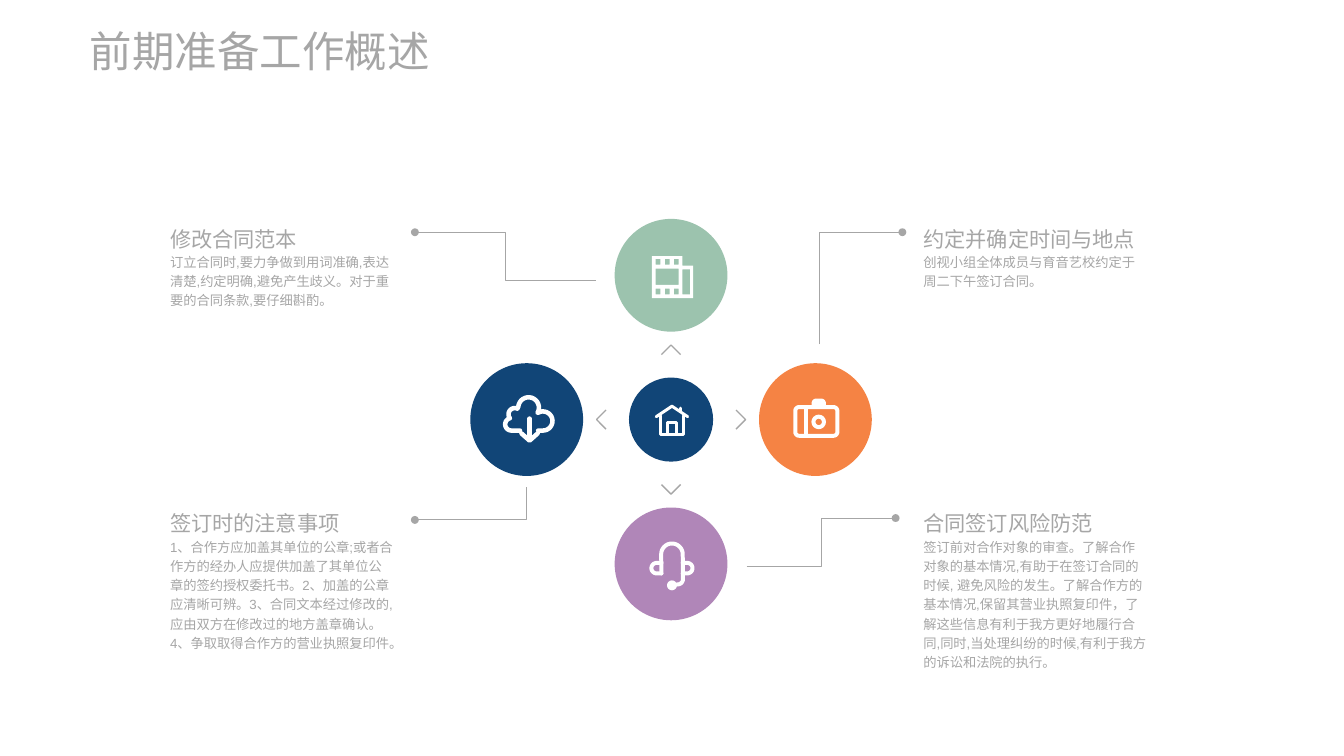
"""Build the slide that sums up the preparation work around a contract."""
from math import cos, radians, sin

from lxml.etree import SubElement
from pptx import Presentation
from pptx.dml.color import RGBColor
from pptx.enum.shapes import MSO_SHAPE
from pptx.enum.text import MSO_ANCHOR, MSO_AUTO_SIZE, PP_ALIGN
from pptx.oxml.ns import qn
from pptx.util import Inches, Pt

COLORS = {"grey": "A6A6A6", "white": "FFFFFF", "green": "9CC3AE",
          "navy": "114577", "orange": "F58344", "purple": "B086B8"}
WIDTH, HEIGHT = 14.06, 7.91
HUB_X, HUB_Y = 7.02, 4.39
ORBIT, TIP = 1.51, 0.78
LEFT_TEXT, RIGHT_TEXT, TEXT_WIDTH = 1.78, 9.66, 2.33
UPPER_ROW, LOWER_ROW = 2.31, 5.29

TITLE = "前期准备工作概述"
NOTES = [
    (LEFT_TEXT, UPPER_ROW, 0.91, "修改合同范本",
     "订立合同时,要力争做到用词准确,表达清楚,约定明确,避免产生歧义。对于重要的合同条款,要仔细斟酌。"),
    (RIGHT_TEXT, UPPER_ROW, 0.71, "约定并确定时间与地点",
     "创视小组全体成员与育音艺校约定于周二下午签订合同。"),
    (LEFT_TEXT, LOWER_ROW, 1.52, "签订时的注意事项",
     "1、合作方应加盖其单位的公章;或者合作方的经办人应提供加盖了其单位公章的签约授权委托书。"
     "2、加盖的公章应清晰可辨。3、合同文本经过修改的,应由双方在修改过的地方盖章确认。"
     "4、争取取得合作方的营业执照复印件。"),
    (RIGHT_TEXT, LOWER_ROW, 1.72, "合同签订风险防范",
     "签订前对合作对象的审查。了解合作对象的基本情况,有助于在签订合同的时候, 避免风险的发生。"
     "了解合作方的基本情况,保留其营业执照复印件，了解这些信息有利于我方更好地履行合同,同时,"
     "当处理纠纷的时候,有利于我方的诉讼和法院的执行。"),
]
LEADERS = [
    [(6.23, 2.94), (5.29, 2.94), (5.29, 2.43), (4.34, 2.43)],
    [(8.57, 3.6), (8.57, 2.43), (9.44, 2.43)],
    [(7.81, 5.93), (8.59, 5.93), (8.59, 5.42), (9.37, 5.42)],
    [(5.51, 5.1), (5.51, 5.44), (4.34, 5.44)],
]


def arc(x, y, radius, start, end):
    """Return points along an arc, with angles running clockwise from the right."""
    angles = [start + (end - start) * step / 16 for step in range(17)]
    return [(x + radius * cos(radians(a)), y + radius * sin(radians(a))) for a in angles]


def box(left, top, right, bottom):
    """Return the corners of a rectangle."""
    return [(left, top), (right, top), (right, bottom), (left, bottom)]


CLOUD = [
    [(-7, 11.5), *arc(-16, 5, 6.5, 90, 255), *arc(-12.5, -5.5, 6.5, 140, 295),
     *arc(2, -12.5, 10.8, 185, 390), *arc(17, 1.5, 10, 240, 450), (12, 11.5)],
    [(3, -1), (3, 21)],
    [(-5.5, 14.5), (3, 22), (11.5, 14.5)],
]
HEADSET = [
    [(-10, 10), *arc(-15, 4.5, 5.5, 90, 270), (-10, -1)],
    [(-10, 10), *arc(1, -10, 11.3, 180, 360), *arc(7, 16, 5.5, 0, 90), (3, 22)],
    [(12.3, -1), *arc(17, 4.5, 5.5, 270, 450), (12.3, 10)],
]
CAMERA = [
    [*arc(-17, -9, 4, 180, 270), *arc(19, -9, 4, 270, 360),
     *arc(19, 13, 4, 0, 90), *arc(-17, 13, 4, 90, 180), (-21, -9)],
    [(-9.5, -13), (-9.5, 17)],
    arc(3.5, 2.5, 5.5, 0, 360),
]
HOUSE = [
    [(-15.5, -3), (1, -14), (17.5, -3)],
    [(-10.5, -4), (-10.5, 15.5), (13.5, 15.5), (13.5, -4)],
    [(-3.5, 15), (-3.5, 3.5), (5.5, 3.5), (5.5, 15)],
    [(10, -12), (10, -9)],
]
FILM = [box(-20, -20, 12, 24), box(-16, -7, 8, 10),
        box(12, -10, 23, 24), box(12, -6, 20, 20)]
FILM += [box(x, y, x + 5, y + 6) for x in (-16, -6.5, 3) for y in (-17, 14)]
CAMERA_TOP = [[*arc(1, -17, 5, 180, 270), *arc(6, -17, 5, 270, 360), (11, -13), (-4, -13)]]
MICROPHONE = [arc(1, 22.5, 5.2, 0, 360)]

DISCS = [
    ((0, -1), 1.18, "green", [], 3, FILM),
    ((0, 0), 0.88, "navy", HOUSE, 2.2, []),
    ((1, 0), 1.18, "orange", CAMERA, 3, CAMERA_TOP),
    ((-1, 0), 1.18, "navy", CLOUD, 3.4, []),
    ((0, 1), 1.18, "purple", HEADSET, 3, MICROPHONE),
]


def color(name):
    """Look up a named colour."""
    return RGBColor.from_string(COLORS[name])


def fill_shape(shape, name):
    """Give a shape a plain fill without outline or shadow."""
    shape.shadow.inherit = False
    shape.fill.solid()
    shape.fill.fore_color.rgb = color(name)
    shape.line.fill.background()


def draw_outline(slide, contours, closed=False):
    """Build one freeform from contours given in inches."""
    contours = [[(Inches(x), Inches(y)) for x, y in contour] for contour in contours]
    builder = slide.shapes.build_freeform(*contours[0][0], scale=1)
    for index, contour in enumerate(contours):
        if index:
            builder.move_to(*contour[0])
        builder.add_line_segments(contour[1:], close=closed)
    return builder.convert_to_shape()


def draw_strokes(slide, contours, name, width, cap="flat", tail=None):
    """Draw open contours as lines."""
    shape = draw_outline(slide, contours)
    shape.shadow.inherit = False
    shape.fill.background()
    shape.line.color.rgb = color(name)
    shape.line.width = Pt(width)
    line = shape.line._get_or_add_ln()
    line.set("cap", cap)
    if tail:
        SubElement(line, qn("a:tailEnd"), type=tail)


def draw_disc(slide, direction, diameter, name, strokes, width, solids):
    """Draw a disc with its icon, whose points are hundredths of an inch from the centre."""
    x, y = HUB_X + ORBIT * direction[0], HUB_Y + ORBIT * direction[1]
    disc = slide.shapes.add_shape(MSO_SHAPE.OVAL, Inches(x - diameter / 2),
                                  Inches(y - diameter / 2), Inches(diameter), Inches(diameter))
    fill_shape(disc, name)

    def place(contours):
        return [[(x + dx / 100, y + dy / 100) for dx, dy in contour] for contour in contours]

    if strokes:
        draw_strokes(slide, place(strokes), "white", width, cap="rnd")
    if solids:
        fill_shape(draw_outline(slide, place(solids), closed=True), "white")


def draw_chevron(slide, dx, dy):
    """Draw a chevron that points away from the hub."""
    base, half = TIP - 0.1, 0.1
    points = [(base, -half), (TIP, 0), (base, half)]
    draw_strokes(slide, [[(HUB_X + along * dx - across * dy, HUB_Y + along * dy + across * dx)
                          for along, across in points]], "grey", 1)


def write_text(shape, lines, anchor, spacing):
    """Fill a shape with lines of text, each with its size."""
    frame = shape.text_frame
    frame_format = {"word_wrap": True, "auto_size": MSO_AUTO_SIZE.NONE, "vertical_anchor": anchor,
                    "margin_left": 0, "margin_top": 0, "margin_right": 0, "margin_bottom": 0}
    for key, value in frame_format.items():
        setattr(frame, key, value)
    for index, (text, size) in enumerate(lines):
        paragraph = frame.add_paragraph() if index else frame.paragraphs[0]
        paragraph.alignment = PP_ALIGN.LEFT
        paragraph.line_spacing = spacing
        run = paragraph.add_run()
        run.text = text
        for key, value in {"name": "Arial", "size": Pt(size)}.items():
            setattr(run.font, key, value)
        run.font.color.rgb = color("grey")


def main():
    """Assemble and save the slide."""
    presentation = Presentation()
    presentation.slide_width, presentation.slide_height = Inches(WIDTH), Inches(HEIGHT)
    slide = presentation.slides.add_slide(presentation.slide_layouts[5])
    title = slide.shapes.title
    place = {"left": 0.94, "top": 0.26, "width": 4.32, "height": 0.54}
    for key, value in place.items():
        setattr(title, key, Inches(value))
    write_text(title, [(TITLE, 32)], MSO_ANCHOR.MIDDLE, 1.0)
    for disc in DISCS:
        draw_disc(slide, *disc)
        if any(disc[0]):
            draw_chevron(slide, *disc[0])
    for leader in LEADERS:
        draw_strokes(slide, [leader], "grey", 0.75, tail="oval")
    for left, top, height, heading, body in NOTES:
        note = slide.shapes.add_textbox(Inches(left), Inches(top),
                                        Inches(TEXT_WIDTH), Inches(height))
        write_text(note, [(heading, 16), (body, 10)], MSO_ANCHOR.TOP, 1.2)
    presentation.save("out.pptx")


if __name__ == "__main__":
    main()
